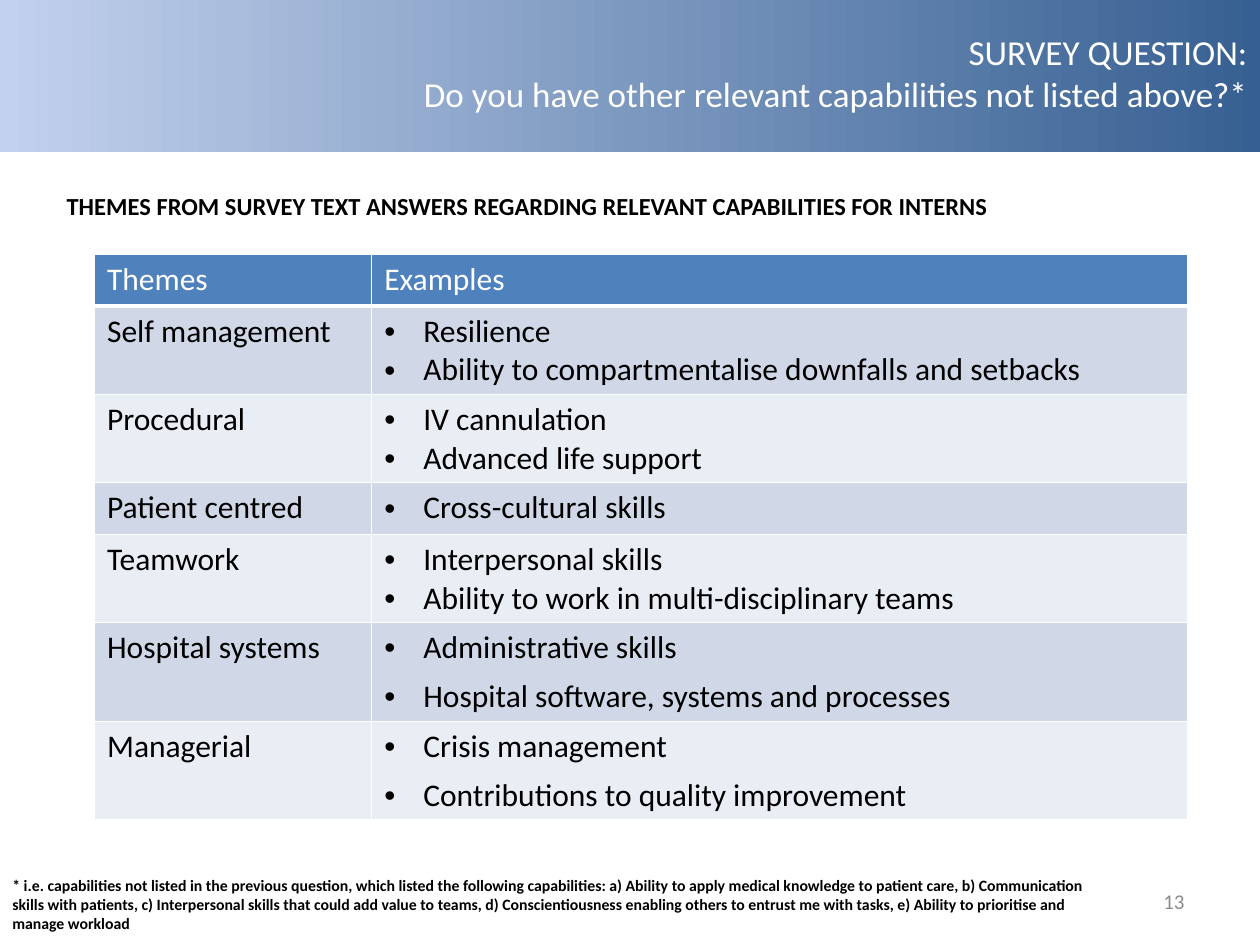
import pptx
import pptx.dml.color
import pptx.enum.shapes
import pptx.enum.text
import pptx.oxml
import pptx.oxml.ns
import pptx.util
from dataclasses import dataclass

Inches = pptx.util.Inches
Pt = pptx.util.Pt
ALIGN = pptx.enum.text.PP_ALIGN
ANCHOR = pptx.enum.text.MSO_ANCHOR
NS = pptx.oxml.ns.nsdecls("a")


@dataclass(frozen=True)
class Theme:
    font: str = "Calibri"
    ink: str = "000000"
    white: str = "FFFFFF"
    muted: str = "8C8C8C"
    banner_dark: str = "376092"
    banner_light: str = "C2D1ED"
    header: str = "4F81BD"
    bands: tuple = ("D0D8E8", "E9EDF4")
    title_size: int = 20
    table_size: int = 18
    heading_size: int = 14
    number_size: int = 12
    note_size: int = 9


def rgb(value):
    return pptx.dml.color.RGBColor.from_string(value)


def write(frame, text, *, font, size, color, bold=False, align=ALIGN.LEFT,
          bullet=False, gap=0):
    """Fill a text frame, one paragraph for each line of text."""
    for index, line in enumerate(text.split("\n")):
        paragraph = frame.add_paragraph() if index else frame.paragraphs[0]
        paragraph.alignment = align
        if index and gap:
            paragraph.space_before = Pt(gap)
        if bullet:
            properties = paragraph._p.get_or_add_pPr()
            properties.set("marL", str(Inches(0.31)))
            properties.set("indent", str(-Inches(0.31)))
            properties.append(pptx.oxml.parse_xml(f'<a:buFont {NS} typeface="Arial"/>'))
            properties.append(pptx.oxml.parse_xml(f'<a:buChar {NS} char="•"/>'))
        run = paragraph.add_run()
        run.text = line
        run.font.name = font
        run.font.size = Pt(size)
        run.font.bold = bold
        run.font.color.rgb = rgb(color)


class SlideBuilder:
    def __init__(self, slide, theme):
        self.slide = slide
        self.theme = theme

    def banner(self, left, top, width, height):
        band = self.slide.shapes.add_shape(
            pptx.enum.shapes.MSO_SHAPE.RECTANGLE,
            Inches(left), Inches(top), Inches(width), Inches(height))
        band.shadow.inherit = False
        band.line.fill.background()
        band.fill.gradient()
        band.fill.gradient_angle = 180
        colors = (self.theme.banner_dark, self.theme.banner_light)
        for stop, color in zip(band.fill.gradient_stops, colors):
            stop.color.rgb = rgb(color)

    def text(self, text, left, top, width, height, *, anchor=ANCHOR.TOP,
             wrap=True, **style):
        box = self.slide.shapes.add_textbox(
            Inches(left), Inches(top), Inches(width), Inches(height))
        box.text_frame.word_wrap = wrap
        box.text_frame.vertical_anchor = anchor
        write(box.text_frame, text, font=self.theme.font, **style)

    def cell(self, cell, text, fill, color, top=1, bottom=1, **style):
        cell.fill.solid()
        cell.fill.fore_color.rgb = rgb(fill)
        write(cell.text_frame, text, font=self.theme.font,
              size=self.theme.table_size, color=color, **style)
        edges = (("lnL", 1), ("lnR", 1), ("lnT", top), ("lnB", bottom))
        for index, (edge, width) in enumerate(edges):
            cell._tc.get_or_add_tcPr().insert(index, pptx.oxml.parse_xml(
                f'<a:{edge} {NS} w="{Pt(width)}"><a:solidFill>'
                f'<a:srgbClr val="{self.theme.white}"/></a:solidFill></a:{edge}>'))

    def table(self, left, top, widths, headings, themes):
        heights = [0.41]
        for _, examples, gap in themes:
            heights.append(0.41 if len(examples) == 1 else 0.78 if gap else 0.7)
        table = self.slide.shapes.add_table(
            len(heights), len(widths), Inches(left), Inches(top),
            Inches(sum(widths)), Inches(sum(heights))).table
        table.first_row = table.horz_banding = False
        for column, width in zip(table.columns, widths):
            column.width = Inches(width)
        for row, height in zip(table.rows, heights):
            row.height = Inches(height)

        for column, heading in enumerate(headings):
            self.cell(table.cell(0, column), heading, self.theme.header,
                      self.theme.white, bottom=3)
        for row, (name, examples, gap) in enumerate(themes, start=1):
            look = dict(fill=self.theme.bands[(row - 1) % 2],
                        color=self.theme.ink, top=3 if row == 1 else 1)
            self.cell(table.cell(row, 0), name, **look)
            self.cell(table.cell(row, 1), "\n".join(examples),
                      bullet=True, gap=gap, **look)


# Theme name, examples, space between examples in points
SURVEY_THEMES = [
    ("Self management",
     ["Resilience", "Ability to compartmentalise downfalls and setbacks"], 0),
    ("Procedural", ["IV cannulation", "Advanced life support"], 0),
    ("Patient centred", ["Cross-cultural skills"], 0),
    ("Teamwork",
     ["Interpersonal skills", "Ability to work in multi-disciplinary teams"], 0),
    ("Hospital systems",
     ["Administrative skills", "Hospital software, systems and processes"], 6),
    ("Managerial",
     ["Crisis management", "Contributions to quality improvement"], 6),
]

FOOTNOTE = (
    "* i.e. capabilities not listed in the previous question, which listed the "
    "following capabilities: a) Ability to apply medical knowledge to patient care, "
    "b) Communication skills with patients, c) Interpersonal skills that could add "
    "value to teams, d) Conscientiousness enabling others to entrust me with tasks, "
    "e) Ability to prioritise and manage workload")


def main():
    deck = pptx.Presentation()
    deck.slide_width, deck.slide_height = Inches(10), Inches(7.5)
    theme = Theme()
    page = SlideBuilder(deck.slides.add_slide(deck.slide_layouts[6]), theme)

    # Title banner
    page.banner(0, 0, 10, 1.21)
    page.text("SURVEY QUESTION:\n"
              "Do you have other relevant capabilities not listed above?*",
              3.19, 0, 6.81, 1.15, anchor=ANCHOR.MIDDLE, align=ALIGN.RIGHT,
              size=theme.title_size, color=theme.white)

    # Footnote, heading and page number
    page.text(FOOTNOTE, 0, 6.9, 8.94, 0.56,
              size=theme.note_size, color=theme.ink, bold=True)
    page.text("THEMES FROM SURVEY TEXT ANSWERS REGARDING RELEVANT CAPABILITIES "
              "FOR INTERNS", 0.43, 1.47, 7.52, 0.34, wrap=False,
              size=theme.heading_size, color=theme.ink, bold=True)
    page.text("13", 7.17, 6.95, 2.33, 0.4, anchor=ANCHOR.MIDDLE,
              align=ALIGN.RIGHT, size=theme.number_size, color=theme.muted)

    # Themes table
    page.table(0.75, 2.02, (2.2, 6.48), ("Themes", "Examples"), SURVEY_THEMES)

    deck.save("out.pptx")


if __name__ == "__main__":
    main()
